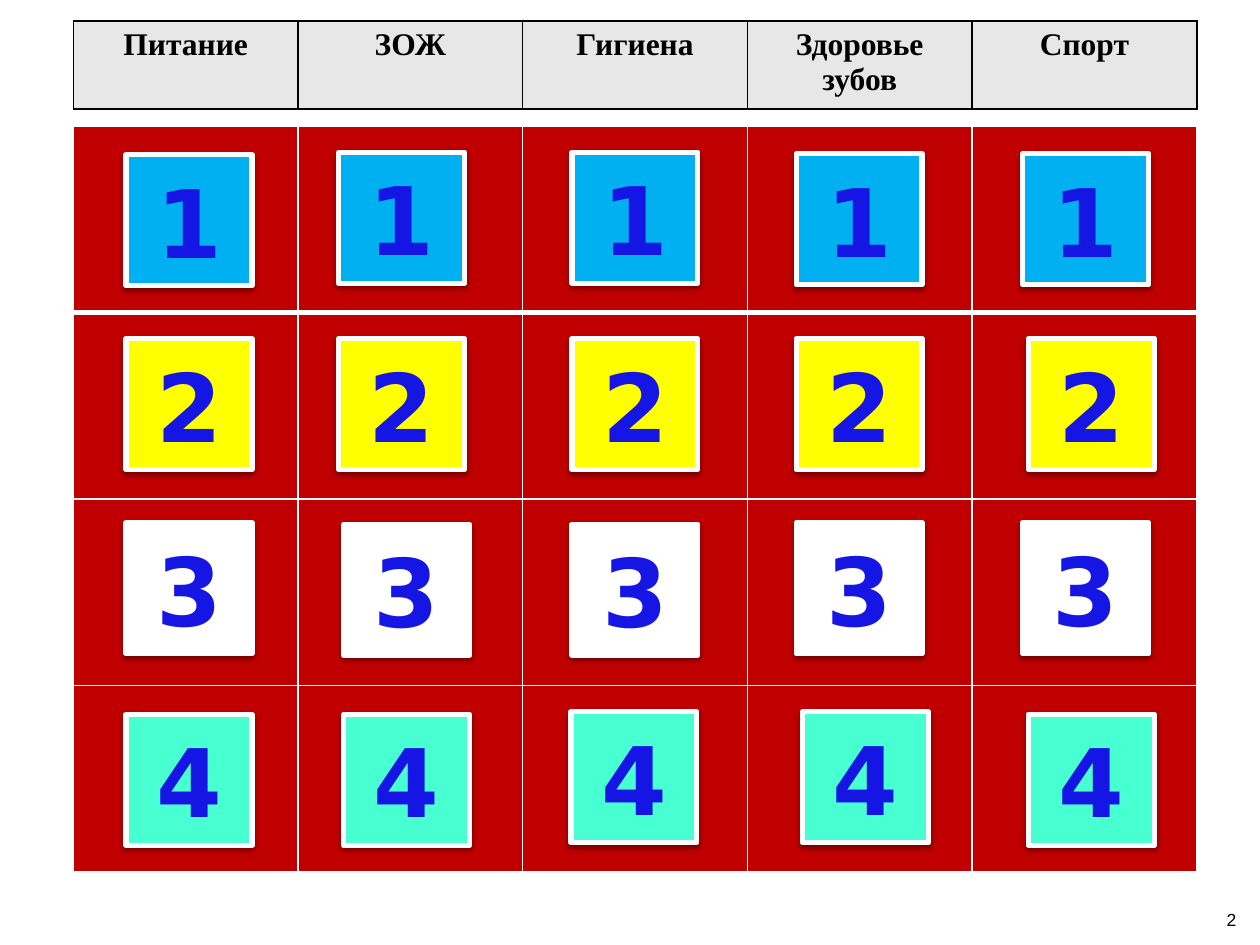
from typing import NamedTuple

from lxml.etree import SubElement
from pptx import Presentation
from pptx.dml.color import RGBColor
from pptx.enum.shapes import MSO_SHAPE
from pptx.enum.text import MSO_ANCHOR, PP_ALIGN
from pptx.oxml.ns import qn
from pptx.util import Cm, Pt

TOPICS = ("Питание", "ЗОЖ", "Гигиена", "Здоровье зубов", "Спорт")
BOARD_LEFT, BOARD_WIDTH = 1.48, 22.65
TILE_WIDTH, TILE_HEIGHT = 2.54, 2.64
DIGIT_GRADIENT = ((0, "7979FF"), (75, "1616E4"), (100, "0000BD"))


class TileRow(NamedTuple):
    number: str
    colour: str
    lefts: tuple[float, ...]
    tops: tuple[float, ...]


TILE_ROWS = (
    TileRow("1", "00B0F0", (2.54, 6.83, 11.53, 16.05, 20.62), (3.12, 3.07, 3.07, 3.1, 3.1)),
    TileRow("2", "FFFF00", (2.54, 6.83, 11.53, 16.05, 20.73), (6.83,) * 5),
    TileRow("3", "FFFFFF", (2.54, 6.93, 11.53, 16.05, 20.62), (10.54, 10.57, 10.57, 10.54, 10.54)),
    TileRow("4", "47FFD1", (2.54, 6.93, 11.51, 16.18, 20.73), (14.4, 14.4, 14.35, 14.35, 14.4)),
)


def rgb(colour: str) -> RGBColor:
    return RGBColor.from_string(colour)


def style_text(paragraph, size: float, font_name: str, colour: str, bold: bool, align) -> None:
    paragraph.alignment = align
    for run in paragraph.runs:
        run.font.size = Pt(size)
        run.font.name = font_name
        run.font.bold = bold
        run.font.color.rgb = rgb(colour)


def add_colour(parent, colour: str):
    element = SubElement(parent, qn("a:srgbClr"))
    element.set("val", colour)
    return element


def style_cell(cell, fill: str, border: str, top: float = 1, bottom: float = 1) -> None:
    cell.fill.solid()
    cell.fill.fore_color.rgb = rgb(fill)
    properties = cell._tc.get_or_add_tcPr()
    edges = (("a:lnL", 1), ("a:lnR", 1), ("a:lnT", top), ("a:lnB", bottom))
    for index, (tag, width) in enumerate(edges):
        edge = SubElement(properties, qn(tag))
        edge.set("w", str(Pt(width)))
        add_colour(SubElement(edge, qn("a:solidFill")), border)
        properties.insert(index, edge)


def add_grid(slide, rows: int, top: float, row_height: float):
    """Add an unbanded table that spans the board."""
    grid = slide.shapes.add_table(
        rows, len(TOPICS), Cm(BOARD_LEFT), Cm(top), Cm(BOARD_WIDTH), Cm(row_height * rows)
    ).table
    grid.first_row = grid.horz_banding = False
    return grid


def add_topics(slide) -> None:
    header = add_grid(slide, 1, 0.42, 1.48)
    for cell, topic in zip(header.rows[0].cells, TOPICS):
        cell.text_frame.text = topic
        style_text(cell.text_frame.paragraphs[0], 18, "Times New Roman", "000000", True, PP_ALIGN.CENTER)
        style_cell(cell, "E7E7E7", "000000")


def add_board(slide) -> None:
    board = add_grid(slide, len(TILE_ROWS), 2.54, 3.76)
    for index, row in enumerate(board.rows):
        for cell in row.cells:
            style_cell(
                cell, "C00000", "FFFFFF",
                top=3 if index == 1 else 1, bottom=3 if index == 0 else 1,
            )


def add_shadow(shape) -> None:
    shape.shadow.inherit = False
    effects = shape._element.spPr.find(qn("a:effectLst"))
    shadow = SubElement(effects, qn("a:outerShdw"))
    settings = {"blurRad": Pt(3.1), "dist": Pt(1.6), "dir": 90 * 60000, "rotWithShape": 0}
    for name, value in settings.items():
        shadow.set(name, str(value))
    SubElement(add_colour(shadow, "000000"), qn("a:alpha")).set("val", "38000")


def apply_digit_gradient(run) -> None:
    run.font.fill.gradient()
    run.font.fill.gradient_angle = 270
    stops = run._r.rPr.find(qn("a:gradFill")).find(qn("a:gsLst"))
    for stop in list(stops):
        stops.remove(stop)
    for position, colour in DIGIT_GRADIENT:
        stop = SubElement(stops, qn("a:gs"))
        stop.set("pos", str(position * 1000))
        add_colour(stop, colour)


def add_tile(slide, number: str, colour: str, left: float, top: float) -> None:
    tile = slide.shapes.add_shape(
        MSO_SHAPE.RECTANGLE, Cm(left), Cm(top), Cm(TILE_WIDTH), Cm(TILE_HEIGHT)
    )
    tile.fill.solid()
    tile.fill.fore_color.rgb = rgb(colour)
    tile.line.color.rgb = rgb("FFFFFF")
    tile.line.width = Pt(3)
    add_shadow(tile)
    frame = tile.text_frame
    frame.text = number
    frame.vertical_anchor = MSO_ANCHOR.MIDDLE
    digit = frame.paragraphs[0]
    style_text(digit, 54, "DejaVu Sans", "1616E4", True, PP_ALIGN.CENTER)
    apply_digit_gradient(digit.runs[0])


def add_page_number(slide, number: str) -> None:
    frame = slide.shapes.add_textbox(Cm(19.25), Cm(18.21), Cm(5.92), Cm(1.32)).text_frame
    frame.word_wrap = True
    frame.text = number
    style_text(frame.paragraphs[0], 10, "Arial", "000000", False, PP_ALIGN.RIGHT)


def main() -> None:
    presentation = Presentation()
    presentation.slide_width, presentation.slide_height = Cm(25.4), Cm(19.05)
    slide = presentation.slides.add_slide(presentation.slide_layouts[6])
    add_page_number(slide, "2")
    add_board(slide)
    add_topics(slide)
    for row in TILE_ROWS:
        for left, top in zip(row.lefts, row.tops):
            add_tile(slide, row.number, row.colour, left, top)
    presentation.save("out.pptx")


if __name__ == "__main__":
    main()
